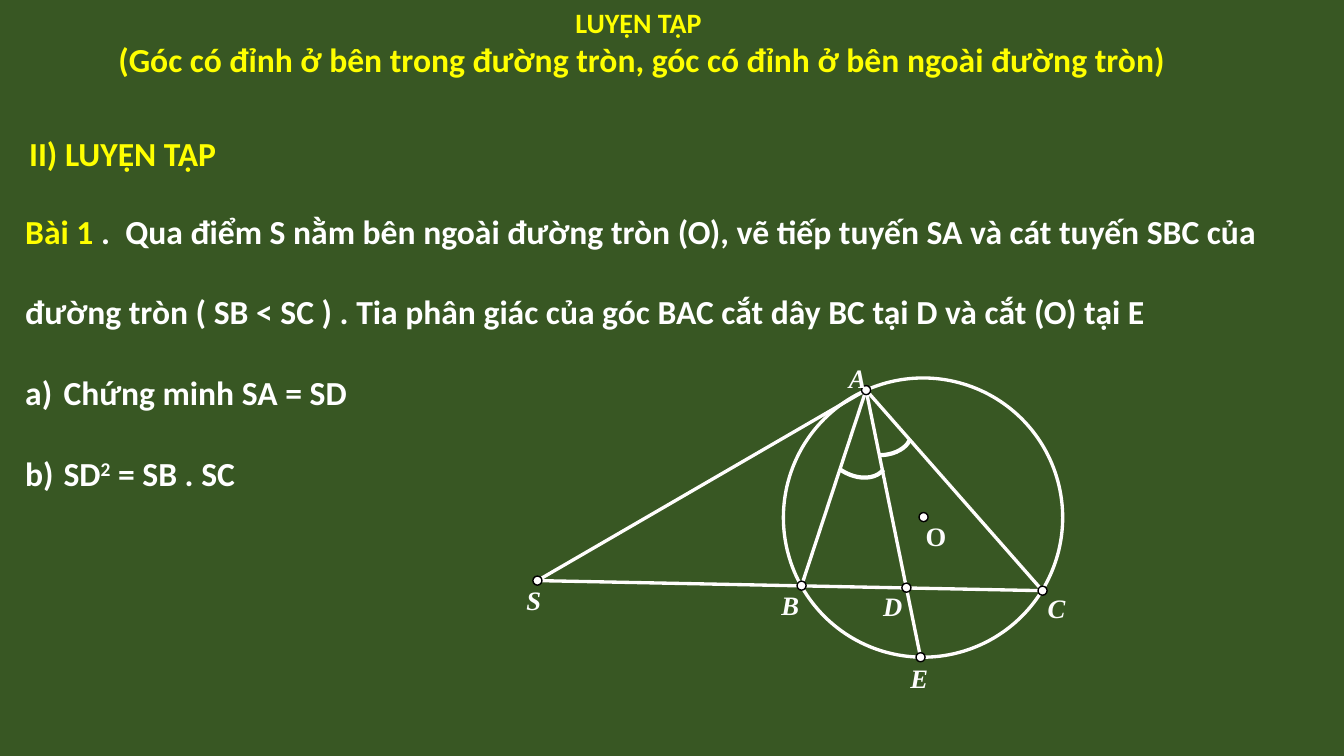
from lxml import etree
from pptx import Presentation
from pptx.dml.color import RGBColor
from pptx.enum.shapes import MSO_CONNECTOR, MSO_SHAPE
from pptx.enum.text import MSO_ANCHOR, MSO_AUTO_SIZE, PP_ALIGN
from pptx.oxml.ns import qn
from pptx.util import Inches, Pt

STRAIGHT = MSO_CONNECTOR.STRAIGHT
OVAL, ARC = MSO_SHAPE.OVAL, MSO_SHAPE.ARC
TOP = MSO_ANCHOR.TOP
NO_FIT = MSO_AUTO_SIZE.NONE
LEFT, CENTER = PP_ALIGN.LEFT, PP_ALIGN.CENTER

THEME = {
    "board": RGBColor.from_string("385723"),
    "accent": RGBColor.from_string("FFFF00"),
    "text": RGBColor.from_string("FFFFFF"),
    "stroke": RGBColor.from_string("FFFDFD"),
    "label": RGBColor.from_string("FDFDFD"),
    "outline": RGBColor.from_string("000000"),
    "heading": {"name": "Calibri", "size": Pt(24), "bold": True},
    "overline": {"name": "Calibri", "size": Pt(20), "bold": True},
    "point": {"name": "Times New Roman", "size": Pt(19), "bold": True},
}


def write(para, text, style, color, **extra):
    span = para.add_run()
    span.text = text
    for name, value in {**style, **extra}.items():
        setattr(span.font, name, value)
    span.font.color.rgb = color
    return span


def set_frame(box, left, top, width, height):
    box.left, box.top = Inches(left), Inches(top)
    box.width, box.height = Inches(width), Inches(height)
    frame = box.text_frame
    for name, value in {"word_wrap": True, "auto_size": NO_FIT, "vertical_anchor": TOP}.items():
        setattr(frame, name, value)
    return frame


deck = Presentation()
deck.slide_width, deck.slide_height = Inches(13.33), Inches(7.5)
page = deck.slides.add_slide(deck.slide_layouts[1])
page.background.fill.solid()
page.background.fill.fore_color.rgb = THEME["board"]

title = page.shapes.title
title.fill.solid()
title.fill.fore_color.rgb = THEME["board"]
frame = set_frame(title, 0, 0, 12.73, 1.18)
title_lines = [
    ("LUYỆN TẬP ", "overline"),
    ("(Góc có đỉnh ở bên trong đường tròn, góc có đỉnh ở bên ngoài đường tròn)", "heading"),
]
for index, (text, style) in enumerate(title_lines):
    para = frame.add_paragraph() if index else frame.paragraphs[0]
    para.alignment = CENTER
    write(para, text, THEME[style], THEME["accent"])

section = page.shapes.add_textbox(0, 0, 0, 0)
frame = set_frame(section, 0.19, 1.27, 7.58, 0.5)
write(frame.paragraphs[0], "II) LUYỆN TẬP", THEME["heading"], THEME["accent"])

frame = set_frame(page.placeholders[1], 0.15, 1.64, 12.58, 4.14)
exercise = [
    [
        ("Bài 1 ", "accent", None),
        (".  Qua điểm S nằm bên ngoài đường tròn (O), vẽ tiếp tuyến SA và cát tuyến SBC của "
         "đường tròn ( SB < SC ) . Tia phân giác của góc BAC cắt dây BC tại D và cắt (O) tại E",
         "text", None),
    ],
    [("Chứng minh SA = SD", "text", None)],
    [("SD", "text", None), ("2", "text", "30000"), (" = SB . SC", "text", None)],
]
for index, spans in enumerate(exercise):
    para = frame.add_paragraph() if index else frame.paragraphs[0]
    for name, value in {"alignment": LEFT, "line_spacing": 2.0, "space_before": Pt(0)}.items():
        setattr(para, name, value)
    for text, color, baseline in spans:
        span = write(para, text, THEME["heading"], THEME[color])
        if baseline:
            span.font._element.set("baseline", baseline)
    properties = para._p.get_or_add_pPr()
    indent = Inches(0.38) if index else 0
    properties.set("marL", str(indent))
    properties.set("indent", str(-indent))
    if index:
        etree.SubElement(properties, qn("a:buFont"), typeface="Calibri")
        etree.SubElement(properties, qn("a:buAutoNum"), type="alphaLcParenR")
    else:
        etree.SubElement(properties, qn("a:buNone"))

circle = page.shapes.add_shape(OVAL, Inches(7.77), Inches(3.75), Inches(2.77), Inches(2.77))
circle.shadow.inherit = False
circle.fill.background()
circle.line.color.rgb = THEME["stroke"]
circle.line.width = Pt(2.38)

points = {
    "D": ((8.99, 5.83), (8.76, 5.85)),
    "E": ((9.13, 6.52), (9.03, 6.57)),
    "B": ((7.95, 5.81), (7.75, 5.84)),
    "O": ((9.16, 5.13), (9.18, 5.16)),
    "C": ((10.34, 5.86), (10.39, 5.87)),
    "S": ((5.33, 5.76), (5.22, 5.79)),
    "A": ((8.59, 3.87), (8.42, 3.59)),
}

for start, end in ("SC", "SA", "AB", "AC", "AE"):
    ends = [Inches(value) for value in points[start][0] + points[end][0]]
    segment = page.shapes.add_connector(STRAIGHT, *ends)
    segment.line.color.rgb = THEME["stroke"]
    segment.line.width = Pt(2.38)
    etree.SubElement(segment._element.spPr, qn("a:effectLst"))

DOT = 0.09
for name, ((x, y), (label_left, label_top)) in points.items():
    group = page.shapes.add_group_shape()
    dot = group.shapes.add_shape(
        OVAL, Inches(x - DOT / 2), Inches(y - DOT / 2), Inches(DOT), Inches(DOT))
    dot.shadow.inherit = False
    dot.fill.solid()
    dot.fill.fore_color.rgb = THEME["stroke"]
    dot.line.color.rgb = THEME["outline"]
    dot.line.width = Pt(1)
    label = group.shapes.add_textbox(0, 0, 0, 0)
    frame = set_frame(label, label_left, label_top, 0.29, 0.35)
    frame.word_wrap = False
    for side in ("left", "top", "right", "bottom"):
        setattr(frame, f"margin_{side}", 0)
    write(frame.paragraphs[0], name, THEME["point"], THEME["label"], italic=name != "O")

angle_marks = [
    (8.39, 3.85, 102.4, 165.83, 200.72),
    (8.19, 4.03, 129.5, 162, 211.12),
]
for left, top, rotation, start, end in angle_marks:
    mark = page.shapes.add_shape(ARC, Inches(left), Inches(top), Inches(0.55), Inches(0.77))
    mark.shadow.inherit = False
    mark.rotation = rotation
    mark.adjustments[0], mark.adjustments[1] = start, end
    mark.fill.background()
    mark.line.color.rgb = THEME["text"]
    mark.line.width = Pt(3)

deck.save("out.pptx")
